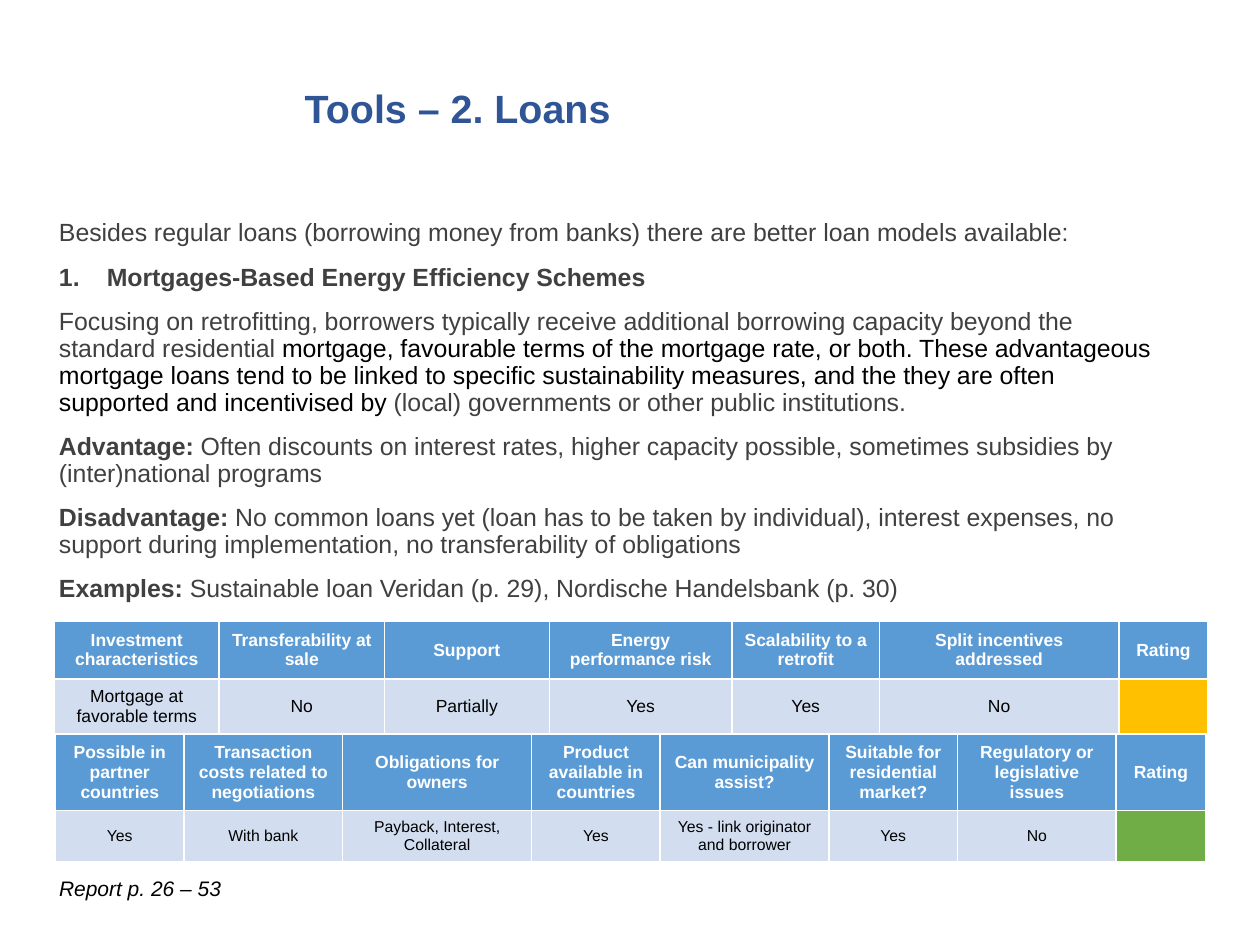
"""Build the slide on mortgage-based loans with its two rating tables."""
from lxml.etree import SubElement
from pptx import Presentation
from pptx.dml.color import RGBColor
from pptx.enum.text import MSO_ANCHOR as Anchor, PP_ALIGN as Align
from pptx.oxml.ns import qn
from pptx.util import Inches, Pt

GREY, BLACK, WHITE = "404040", "000000", "FFFFFF"
TITLE_BLUE, HEADER_BLUE, PALE_BLUE = "2F5597", "5B9BD5", "D2DEEF"
AMBER, GREEN = "FFC000", "70AD47"


def color(value):
    return RGBColor.from_string(value)


def add_text(paragraph, text, size=14.2, fill=GREY, bold=False, italic=False):
    run = paragraph.add_run()
    run.text = text
    font = run.font
    font.name, font.size = "Arial", Pt(size)
    font.bold, font.italic = bold, italic
    font.color.rgb = color(fill)


presentation = Presentation()
presentation.slide_width, presentation.slide_height = Inches(10), Inches(7.5)
slide = presentation.slides.add_slide(presentation.slide_layouts[6])

frames = []
for box in [(0.37, 1.7, 8.94, 4.3), (2.32, 0.6, 6.28, 0.56), (0.37, 6.9, 2.32, 0.3)]:
    frame = slide.shapes.add_textbox(*map(Inches, box)).text_frame
    frame.word_wrap = True
    frames.append(frame)
body, title, reference = frames

title.vertical_anchor = Anchor.MIDDLE
title.paragraphs[0].line_spacing = 0.9
add_text(title.paragraphs[0], "Tools – 2. Loans", size=22.5, fill=TITLE_BLUE, bold=True)
add_text(reference.paragraphs[0], "Report p. 26 – 53", size=12, fill=BLACK, italic=True)

plain, strong, dark = {}, {"bold": True}, {"fill": BLACK}
body_paragraphs = [
    [("Besides regular loans (borrowing money from banks) there are better loan models "
      "available:", plain)],
    [("Mortgages-Based Energy Efficiency Schemes", strong)],
    [("Focusing on retrofitting, borrowers typically receive additional borrowing capacity "
      "beyond the standard residential ", plain),
     ("mortgage, favourable terms of the mortgage rate, or both. These advantageous mortgage "
      "loans tend to be linked to specific sustainability measures, and the they are often "
      "supported and incentivised by ", dark),
     ("(local) governments or other public institutions.", plain)],
    [("Advantage:", strong),
     (" Often discounts on interest rates, higher capacity possible, sometimes subsidies by "
      "(inter)national programs", plain)],
    [("Disadvantage:", strong),
     (" No common loans yet (loan has to be taken by individual), interest expenses, no "
      "support during implementation, no transferability of obligations", plain)],
    [("Examples: ", strong),
     ("Sustainable loan Veridan (p. 29), Nordische Handelsbank (p. 30)", plain)],
]
for index, runs in enumerate(body_paragraphs):
    paragraph = body.add_paragraph() if index else body.paragraphs[0]
    paragraph.line_spacing = 0.9
    paragraph.space_before = Pt(10 if index else 0)
    for text, text_format in runs:
        add_text(paragraph, text, **text_format)

properties = body.paragraphs[1]._p.get_or_add_pPr()
properties.set("marL", str(Inches(0.38)))
properties.set("indent", str(Inches(-0.38)))
SubElement(properties, qn("a:buAutoNum"), type="arabicPeriod")

rating_tables = [
    {"left": 0.43, "top": 4.93, "rating": AMBER, "value_size": 10,
     "heights": [0.46, 0.43],
     "columns": [
         (1.31, "Investment characteristics", "Mortgage at favorable terms"),
         (1.31, "Transferability at sale", "No"),
         (1.31, "Support", "Partially"),
         (1.45, "Energy performance risk", "Yes"),
         (1.17, "Scalability to a retrofit", "Yes"),
         (1.9, "Split incentives addressed", "No"),
         (0.71, "Rating", "")]},
    {"left": 0.44, "top": 5.83, "rating": GREEN, "value_size": 9,
     "heights": [0.59, 0.41],
     "columns": [
         (1.02, "Possible in partner countries", "Yes"),
         (1.26, "Transaction costs related to negotiations", "With bank"),
         (1.5, "Obligations for owners", "Payback, Interest, Collateral"),
         (1.02, "Product available in countries", "Yes"),
         (1.34, "Can municipality assist?", "Yes - link originator and borrower"),
         (1.02, "Suitable for residential market?", "Yes"),
         (1.26, "Regulatory or legislative issues", "No"),
         (0.71, "Rating", "")]},
]
for data in rating_tables:
    columns, heights = data["columns"], data["heights"]
    width = sum(column[0] for column in columns)
    table = slide.shapes.add_table(
        2, len(columns), Inches(data["left"]), Inches(data["top"]),
        Inches(width), Inches(sum(heights))).table
    for row, height in zip(table.rows, heights):
        row.height = Inches(height)
    for index, (column_width, *texts) in enumerate(columns):
        table.columns[index].width = Inches(column_width)
        value_fill = PALE_BLUE if texts[1] else data["rating"]
        formats = [{"size": 10, "fill": WHITE, "bold": True},
                   {"size": data["value_size"], "fill": BLACK}]
        for row_index, background in enumerate([HEADER_BLUE, value_fill]):
            cell = table.cell(row_index, index)
            cell.vertical_anchor = Anchor.MIDDLE
            cell.fill.solid()
            cell.fill.fore_color.rgb = color(background)
            if texts[row_index]:
                paragraph = cell.text_frame.paragraphs[0]
                paragraph.alignment = Align.CENTER
                add_text(paragraph, texts[row_index], **formats[row_index])

presentation.save("out.pptx")
